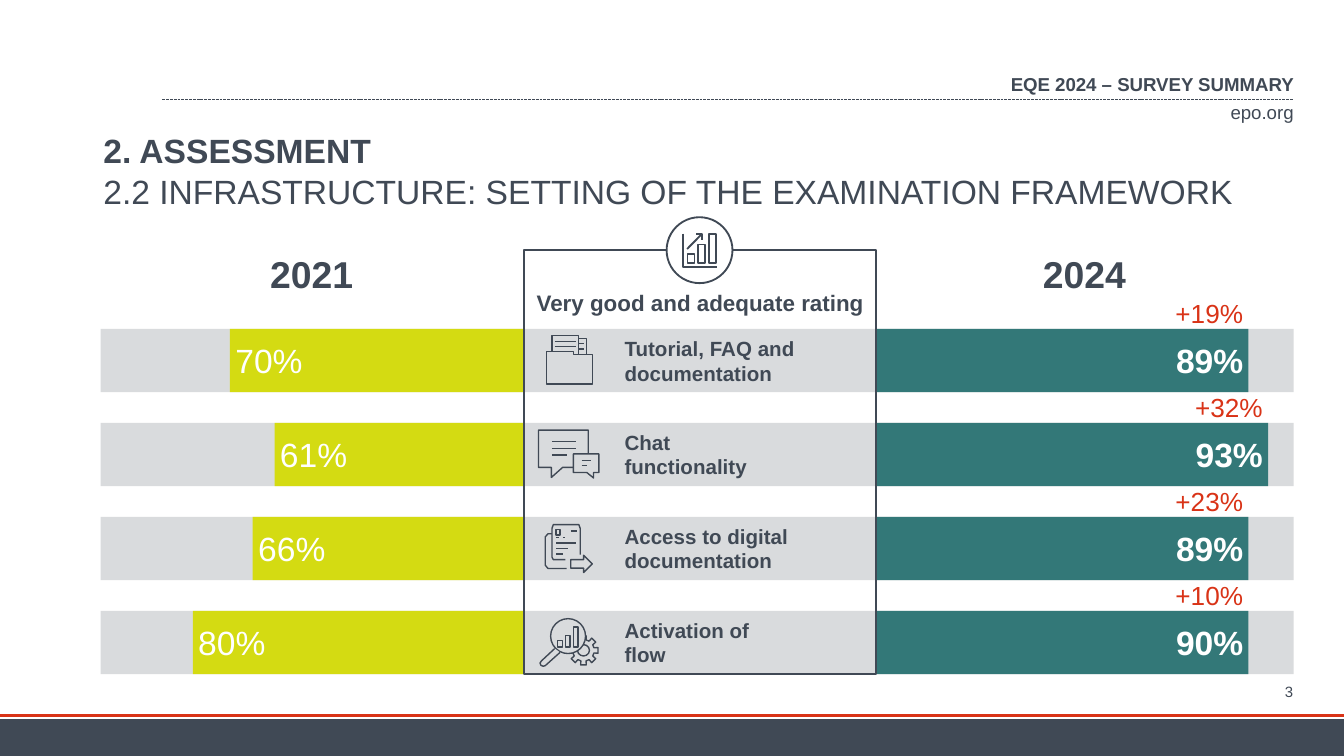
from math import cos, radians, sin

from lxml.etree import SubElement
from pptx import Presentation
from pptx.dml.color import RGBColor
from pptx.enum.dml import MSO_LINE
from pptx.enum.shapes import MSO_CONNECTOR, MSO_SHAPE
from pptx.enum.text import MSO_ANCHOR, MSO_AUTO_SIZE, PP_ALIGN
from pptx.oxml.ns import qn
from pptx.util import Pt

COLORS = {
    "ink": "404955", "red": "D93317", "track": "D9DBDD",
    "lime": "D4DB12", "teal": "337878", "white": "FFFFFF",
}
FONT = "Arial"

TITLE = [("2. ASSESSMENT", True),
         ("2.2 INFRASTRUCTURE: SETTING OF THE EXAMINATION FRAMEWORK", False)]

gear = [(32 + r * cos(radians(a)), 21.2 + r * sin(radians(a)))
        for tooth in range(0, 360, 45)
        for r, a in ((5.8, tooth - 14), (7.9, tooth - 11),
                     (7.9, tooth + 11), (5.8, tooth + 14))]

FOLDER = [
    ("rect", (19.4, 5, 14.4, 10.8)),
    ("line", (20.2, 7.9, 32.4, 7.9)), ("line", (20.2, 10.8, 32.4, 10.8)),
    ("rect", (15.1, 3.7, 14.4, 10.8)),
    ("line", (16.6, 6.8, 28.1, 6.8)), ("line", (16.6, 9.4, 28.1, 9.4)),
    ("closed", [(12.3, 12.2), (26.6, 12.2), (26.6, 13.7), (36.7, 13.7),
                (36.7, 29.5), (12.3, 29.5)]),
]
CHAT = [
    ("open", [(34.6, 16.6), (34.6, 3.9), (7.9, 3.9), (7.9, 23.8), (14.8, 23.8),
              (14.8, 29.2), (20.9, 23.8), (26.6, 23.8)]),
    ("closed", [(26.6, 16.6), (40.3, 16.6), (40.3, 26.6), (37.4, 26.6),
                (37.4, 29.5), (33.8, 26.6), (26.6, 26.6)]),
    ("line", (15.1, 10.1, 28.1, 10.1)), ("line", (15.1, 13.7, 28.1, 13.7)),
    ("line", (15.1, 17.3, 23, 17.3)),
    ("line", (31, 20.2, 36, 20.2)), ("line", (31, 23, 33.8, 23)),
]
DOCUMENT = [
    ("open", [(15.1, 9.1), (13, 9.1), (11.5, 10.8), (11.5, 25.9), (13, 27.7), (23, 27.7)]),
    ("open", [(30.2, 20.2), (30.2, 6.2), (29.5, 4.2), (15.8, 4.2), (15.1, 6.2),
              (15.1, 21.6), (15.8, 22.9), (22.3, 22.9)]),
    ("arrow", (25.2, 20.6, 11.5, 9.2)),
    ("rect", (17.3, 6.9, 2.2, 2.9)),
    ("line", (25.2, 7.6, 28.8, 7.6)), ("line", (17.3, 14.1, 28.1, 14.1)),
    ("line", (20.9, 11.2, 22.3, 11.2)), ("line", (17.3, 11.2, 18.7, 11.2)),
    ("line", (17.3, 17, 23.8, 17)), ("line", (17.3, 19.9, 20.9, 19.9)),
]
ANALYSIS = [
    ("closed", gear),
    ("ellipse", (28.8, 18.1, 6.4, 6.1)),
    ("ellipse", (14.4, 4.2, 18.7, 18.7)),
    ("open", [(19.4, 22.3), (11.5, 29.4), (10.4, 29.7), (9.2, 29.2), (8.7, 28),
              (9.4, 26.9), (16.6, 20.2)]),
    ("rect", (18, 15.8, 2.7, 3.6)), ("rect", (22.3, 13.4, 2.4, 6)),
    ("rect", (26.6, 8.6, 2.5, 10.8)),
]
GROWTH = [
    ("ellipse", (0, 0, 35.3, 35.3)),
    ("open", [(9, 8.8), (9, 26.6), (27, 26.6)]),
    ("rect", (22.8, 8.9, 3.8, 15.6)), ("rect", (17, 14.6, 3.8, 9.9)),
    ("rect", (11.2, 19.8, 3.8, 4.7)),
    ("line", (11, 17, 18.9, 9)),
    ("open", [(15.9, 8.9), (19.1, 8.9), (19.1, 12.2)]),
]

ROWS = [
    (("Tutorial, FAQ and", "documentation"), "70%", 123.2, "89%", 668.9, "+19%", FOLDER),
    (("Chat", "functionality"), "61%", 147.1, "93%", 679.4, "+32%", CHAT),
    (("Access to digital", "documentation"), "66%", 135.4, "89%", 668.9, "+23%", DOCUMENT),
    (("Activation of", "flow"), "80%", 103.3, "90%", 668.9, "+10%", ANALYSIS),
]
TRACK_LEFT, TRACK_RIGHT = 54, 693.1
PANEL_LEFT, PANEL_RIGHT = 280.6, 469.4
PANEL_TOP, PANEL_BOTTOM = 133.8, 361.1
ROW_TOP, ROW_PITCH, ROW_HEIGHT = 176.2, 50.35, 33.9
VALUE_WIDTH, VALUE_HEIGHT, CHANGE_HEIGHT = 41.8, 21.6, 17.2
PRESETS = {"rect": MSO_SHAPE.RECTANGLE, "ellipse": MSO_SHAPE.OVAL,
           "arrow": MSO_SHAPE.RIGHT_ARROW}

deck = Presentation()
deck.slide_width, deck.slide_height = Pt(720), Pt(405)
slide = deck.slides.add_slide(deck.slide_layouts[5])


def rgb(color):
    return RGBColor.from_string(COLORS[color])


def paint(shape, fill=None, outline=None, weight=1):
    shape.shadow.inherit = False
    if fill:
        shape.fill.solid()
        shape.fill.fore_color.rgb = rgb(fill)
    else:
        shape.fill.background()
    if outline:
        shape.line.color.rgb = rgb(outline)
        shape.line.width = Pt(weight)
    else:
        shape.line.fill.background()


def add_preset(kind, left, top, width, height, **style):
    shape = slide.shapes.add_shape(PRESETS[kind], Pt(left), Pt(top), Pt(width), Pt(height))
    paint(shape, **style)


def add_line(x1, y1, x2, y2, color="ink", weight=0.75, dash=None):
    line = slide.shapes.add_connector(MSO_CONNECTOR.STRAIGHT, Pt(x1), Pt(y1), Pt(x2), Pt(y2))
    line.line.color.rgb = rgb(color)
    line.line.width = Pt(weight)
    if dash:
        line.line.dash_style = dash
    SubElement(line._element.spPr, qn("a:effectLst"))


def write(frame, lines, size, color="ink", align=PP_ALIGN.LEFT, anchor=MSO_ANCHOR.MIDDLE,
          inset=(0, 0, 0, 0), wrap=True):
    frame.auto_size = MSO_AUTO_SIZE.NONE
    frame.word_wrap = wrap
    frame.vertical_anchor = anchor
    frame.margin_left, frame.margin_top, frame.margin_right, frame.margin_bottom = map(Pt, inset)
    paragraph = frame.paragraphs[0]
    paragraph.alignment = align
    for number, (text, bold) in enumerate(lines):
        if number:
            paragraph.add_line_break()
        run = paragraph.add_run()
        run.text = text
        run.font.name, run.font.size, run.font.bold = FONT, Pt(size), bold
        run.font.color.rgb = rgb(color)


def add_text(left, top, width, height, lines, size, **style):
    box = slide.shapes.add_textbox(Pt(left), Pt(top), Pt(width), Pt(height))
    write(box.text_frame, lines, size, **style)


def draw_icon(parts, left, top, fill, weight):
    for kind, data in parts:
        if kind == "line":
            x1, y1, x2, y2 = data
            add_line(left + x1, top + y1, left + x2, top + y2, weight=weight)
        elif kind in PRESETS:
            x, y, width, height = data
            add_preset(kind, left + x, top + y, width, height,
                       fill=fill, outline="ink", weight=weight)
        else:
            points = [(Pt(left + x), Pt(top + y)) for x, y in data]
            builder = slide.shapes.build_freeform(*points[0])
            builder.add_line_segments(points[1:], close=kind == "closed")
            paint(builder.convert_to_shape(), fill if kind == "closed" or fill == "track" else None,
                  "ink", weight)


title = slide.shapes.title
title.left, title.top, title.width, title.height = Pt(55.4), Pt(69.1), Pt(651.6), Pt(43.9)
write(title.text_frame, TITLE, 18, anchor=MSO_ANCHOR.BOTTOM)
title.text_frame.paragraphs[0].line_spacing = Pt(22)

add_text(267.8, 38.3, 425.2, 13, [("EQE 2024 – SURVEY SUMMARY", True)], 10,
         align=PP_ALIGN.RIGHT, wrap=False)
add_line(87, 53.3, 693, 53.3, weight=0.5, dash=MSO_LINE.SQUARE_DOT)
add_text(658.8, 54.2, 34.2, 12.2, [("epo.org", False)], 10, align=PP_ALIGN.RIGHT, wrap=False)
add_preset("rect", 0, 385.2, 720, 19.8, fill="ink")
add_line(0, 383.2, 720, 383.2, "red", 1.5)
add_text(650.2, 365.8, 42.6, 9.4, [("3", False)], 8, align=PP_ALIGN.RIGHT)

for year, left in (("2021", 144.7), ("2024", 558.7)):
    add_text(left, 134.6, 44.6, 24.2, [(year, True)], 20, align=PP_ALIGN.CENTER, wrap=False)

for index, (label, before, before_left, after, after_right, change, icon) in enumerate(ROWS):
    top = ROW_TOP + index * ROW_PITCH
    value_top = top + (ROW_HEIGHT - VALUE_HEIGHT) / 2
    value_left = after_right - VALUE_WIDTH
    value_style = {"inset": (2.9, 0, 2.9, 0), "wrap": False}
    add_preset("rect", TRACK_LEFT, top, TRACK_RIGHT - TRACK_LEFT, ROW_HEIGHT, fill="track")
    add_preset("rect", before_left, top, PANEL_LEFT - before_left, ROW_HEIGHT, fill="lime")
    add_preset("rect", PANEL_RIGHT, top, after_right - PANEL_RIGHT, ROW_HEIGHT, fill="teal")
    add_text(before_left, value_top, VALUE_WIDTH, VALUE_HEIGHT, [(before, False)], 18,
             color="white", **value_style)
    add_text(value_left, value_top, VALUE_WIDTH, VALUE_HEIGHT, [(after, True)], 18,
             color="white", align=PP_ALIGN.RIGHT, **value_style)
    add_text(value_left, top - CHANGE_HEIGHT, VALUE_WIDTH, CHANGE_HEIGHT, [(change, False)], 14,
             color="red", align=PP_ALIGN.RIGHT, **value_style)
    add_text(PANEL_LEFT, top, PANEL_RIGHT - PANEL_LEFT, ROW_HEIGHT,
             [(text, True) for text in label], 11, inset=(54, 2.9, 2.9, 2.9))
    draw_icon(icon, PANEL_LEFT, top, "track", 0.75)

add_preset("rect", PANEL_LEFT, PANEL_TOP, PANEL_RIGHT - PANEL_LEFT, PANEL_BOTTOM - PANEL_TOP,
           outline="ink")
add_text(286.6, 155, 177.1, 14.4, [("Very good and adequate rating", True)], 12,
         align=PP_ALIGN.CENTER, wrap=False)
draw_icon(GROWTH, 357.1, 116.4, "white", 1)

deck.save("out.pptx")
